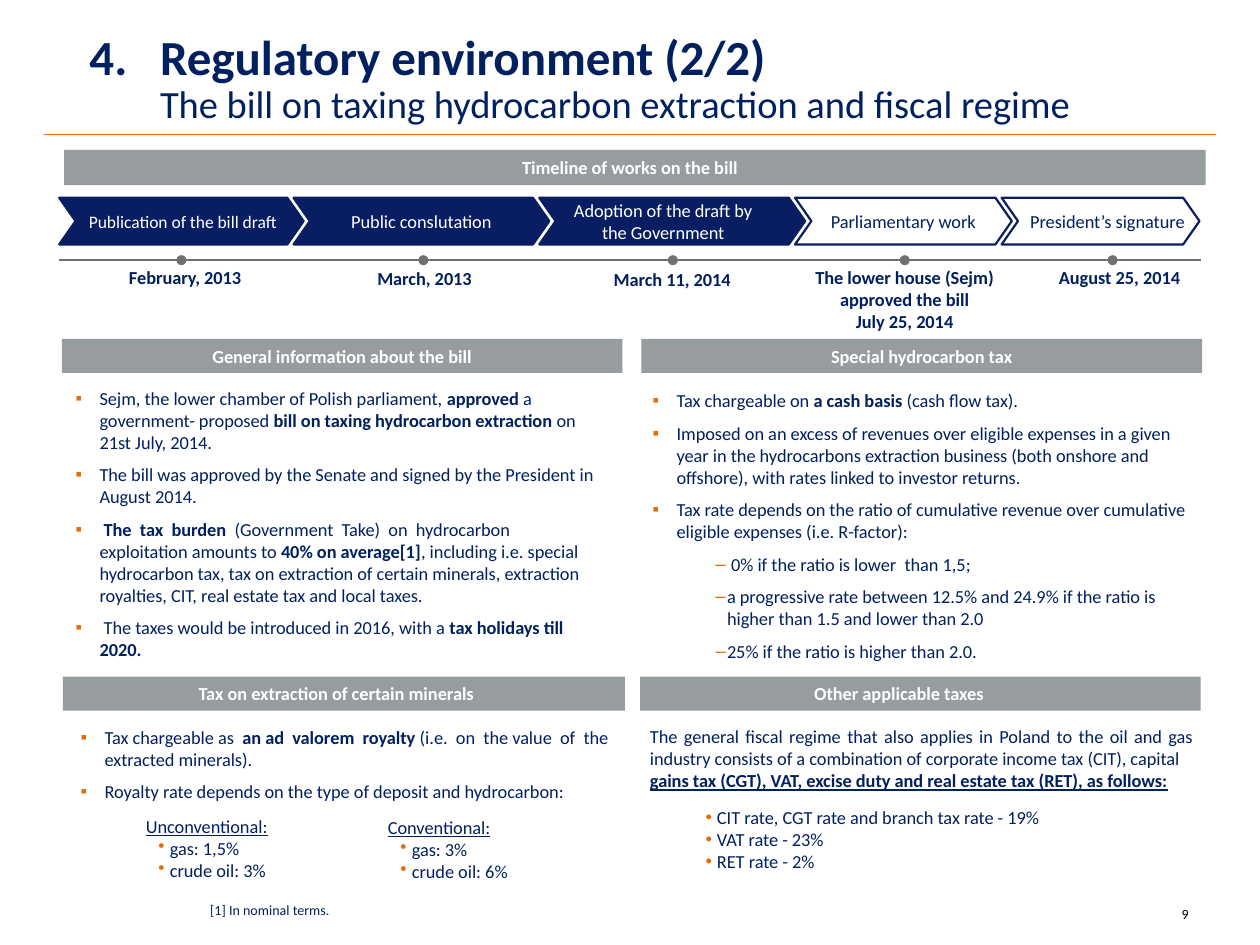
from lxml.etree import SubElement
from pptx import Presentation
from pptx.dml.color import RGBColor
from pptx.enum.shapes import MSO_CONNECTOR, MSO_SHAPE
from pptx.enum.text import MSO_ANCHOR, MSO_AUTO_SIZE, PP_ALIGN
from pptx.oxml.ns import qn
from pptx.util import Inches, Pt

theme = {
    "font": "Calibri", "navy": "002060", "deep": "091D63", "white": "FFFFFF",
    "grey": "979C9E", "dark": "707070", "orange": "FF6600", "mark": "E46C0A",
    "black": "000000", "head": 28, "sub": 22, "text": 10.5, "step": 10, "note": 8,
}
kinds = {
    "plain": {},
    "under": {"line": True},
    "square": {"char": "▪", "left": 0.19, "hang": -0.19, "after": 6},
    "dash": {"char": "‒", "left": 0.59, "hang": -0.09, "after": 6, "level": 1},
    "dot": {"char": "•", "left": 0.19, "hang": -0.09},
    "title": {"start": "4", "left": 0.58, "hang": -0.56, "lead": 0.9},
}

deck = Presentation()
deck.slide_width, deck.slide_height = Inches(10), Inches(7.5)
slide = deck.slides.add_slide(deck.slide_layouts[4])
shapes = slide.shapes
holders = {p.placeholder_format.idx: p for p in slide.placeholders}
col, row = deck.slide_width / 100, deck.slide_height / 75


def cells(x, y, w, h):
    return [round(x * col), round(y * row), round(w * col), round(h * row)]


def put(shape, rows, tone="navy", size="text", align=PP_ALIGN.LEFT, **extra):
    frame = shape.text_frame
    look = {"word_wrap": True, "auto_size": MSO_AUTO_SIZE.NONE,
            "vertical_anchor": MSO_ANCHOR.TOP} | extra
    for name, value in look.items():
        setattr(frame, name, value)
    for i, (kind, text) in enumerate(rows):
        rule = kinds[kind]
        para = frame.paragraphs[0] if i == 0 else frame.add_paragraph()
        form = {"alignment": align, "level": rule.get("level", 0), "space_before": Pt(0),
                "space_after": Pt(rule.get("after", 0)), "line_spacing": rule.get("lead", 1.0)}
        for name, value in form.items():
            setattr(para, name, value)
        if "left" in rule:
            props = para._p.get_or_add_pPr()
            props.set("marL", str(Inches(rule["left"])))
            props.set("indent", str(Inches(rule["hang"])))
            if "char" in rule:
                tint = SubElement(props, qn("a:buClr"))
                SubElement(tint, qn("a:srgbClr"), val=theme["mark"])
                SubElement(props, qn("a:buChar"), char=rule["char"])
            else:
                SubElement(props, qn("a:buAutoNum"), type="arabicPeriod", startAt=rule["start"])
        for j, part in enumerate(text.split("*")):
            for k, piece in enumerate(part.split("\n")):
                if k:
                    para.add_line_break()
                if piece:
                    run = para.add_run()
                    run.text = piece
                    form = {"name": theme["font"], "size": Pt(theme[size]),
                            "bold": j % 2 == 1, "underline": rule.get("line", False)}
                    for name, value in form.items():
                        setattr(run.font, name, value)
                    run.font.color.rgb = RGBColor.from_string(theme[tone])
        for gap in para._p.findall(qn("a:br")):
            SubElement(gap, qn("a:rPr"), sz=str(int(theme[size] * 100)))


title = shapes.title
title.left, title.top, title.width, title.height = cells(5.9, 2.1, 93.7, 8.6)
put(title, [("title", "*Regulatory environment (2/2)*\n"
             "The bill on taxing hydrocarbon extraction and fiscal regime")], size="head")
title.text_frame.paragraphs[0].runs[-1].font.size = Pt(theme["sub"])

for x, y, end, tone, thick in [(3.5, 10.7, 96.5, "orange", 0.75), (4.7, 20.65, 95.3, "dark", 1.5)]:
    left, top, right, low = cells(x, y, end, y)
    rule = shapes.add_connector(MSO_CONNECTOR.STRAIGHT, left, top, right, low)
    rule.line.color.rgb = RGBColor.from_string(theme[tone])
    rule.line.width = Pt(thick)
    SubElement(rule._element.spPr, qn("a:effectLst"))

bars = [
    (5.1, 11.9, 90.6, 2.8, "Timeline of works on the bill", 0.08),
    (4.9, 26.9, 44.5, 2.7, "General information about the bill", 0),
    (50.9, 26.9, 44.5, 2.7, "Special hydrocarbon tax", 0),
    (5, 53.7, 44.6, 2.7, "Tax on extraction of certain minerals", 0.12),
    (50.8, 53.7, 44.5, 2.7, "Other applicable taxes", 0.34),
]
for x, y, w, h, text, lean in bars:
    bar = shapes.add_shape(MSO_SHAPE.RECTANGLE, *cells(x, y, w, h))
    bar.shadow.inherit = False
    bar.fill.solid()
    bar.fill.fore_color.rgb = RGBColor.from_string(theme["grey"])
    bar.line.fill.background()
    put(bar, [("plain", f"*{text}*")], "white", align=PP_ALIGN.CENTER,
        vertical_anchor=MSO_ANCHOR.MIDDLE, margin_left=0, margin_right=Inches(lean),
        margin_top=0, margin_bottom=0)

steps = [
    (19.4, "Publication of the bill draft", "step", True, 0.02, 0, 14.4,
     (8.9, 20.6, 11.6, 2.8), "February, 2013"),
    (20.3, "Public conslutation", "text", True, 0, 0, 33.6,
     (28.7, 20.7, 10, 2.8), "March, 2013"),
    (21.1, "Adoption of the draft by the Government", "text", True, 0.1, 0.24, 53.4,
     (47.4, 20.8, 11.9, 2.8), "March 11, 2014"),
    (17.2, "Parliamentary work", "text", False, 0, 0, 71.8,
     (63.5, 20.6, 16.6, 6.3), "The lower house (Sejm) approved the bill\nJuly 25, 2014"),
    (15.7, "President’s signature", "text", False, 0.11, 0, 88.3,
     (82.9, 20.6, 11.9, 2.8), "August 25, 2014"),
]
x = 4.7
for w, text, size, done, left, right, spot, place, date in steps:
    step = shapes.add_shape(MSO_SHAPE.CHEVRON, *cells(x, 15.7, w, 3.7))
    step.adjustments[0] = 0.35
    step.shadow.inherit = False
    if done:
        step.fill.solid()
        step.fill.fore_color.rgb = RGBColor.from_string(theme["deep"])
    else:
        step.fill.background()
    step.line.color.rgb = RGBColor.from_string(theme["deep"])
    step.line.width = Pt(1.25)
    put(step, [("plain", text)], "white" if done else "navy", size, PP_ALIGN.CENTER,
        word_wrap=right > 0, vertical_anchor=MSO_ANCHOR.MIDDLE, margin_left=Inches(left),
        margin_right=Inches(right), margin_top=0, margin_bottom=0)
    dot = shapes.add_shape(MSO_SHAPE.OVAL, *cells(spot - 0.4, 20.25, 0.8, 0.8))
    dot.shadow.inherit = False
    dot.fill.solid()
    dot.fill.fore_color.rgb = RGBColor.from_string(theme["dark"])
    dot.line.fill.background()
    put(shapes.add_textbox(*cells(*place)), [("plain", f"*{date}*")],
        align=PP_ALIGN.CENTER, word_wrap="\n" in date)
    x += w - 0.8

lists = {
    1: ((5, 30.2, 44.1, 23), [
        ("square", "Sejm, the lower chamber of Polish parliament, *approved *a government- proposed "
         "*bill on taxing hydrocarbon extraction *on 21st July, 2014."),
        ("square", "The bill was approved by the Senate and signed by the President in August 2014."),
        ("square", " *The  tax  burden  *(Government  Take)  on  hydrocarbon  exploitation amounts to "
         "*40% on average[1]*, including i.e. special hydrocarbon tax, tax on extraction of certain "
         "minerals, extraction royalties, CIT, real estate tax and local taxes."),
        ("square", " The taxes would be introduced in 2016, with a *tax holidays till 2020.*")]),
    2: ((50.8, 30.4, 44.9, 22.9), [
        ("square", "Tax chargeable on *a cash basis *(cash flow tax)."),
        ("square", "Imposed on an excess of revenues over eligible expenses in a given year in the "
         "hydrocarbons extraction business (both onshore and offshore), with rates linked to "
         "investor returns."),
        ("square", "Tax rate depends on the ratio of cumulative revenue over cumulative eligible "
         "expenses (i.e. R-factor):"),
        ("dash", " 0% if the ratio is lower  than 1,5;"),
        ("dash", "a progressive rate between 12.5% and 24.9% if the ratio is higher than 1.5 "
         "and lower than 2.0"),
        ("dash", "25% if the ratio is higher than 2.0.")]),
    3: ((5.4, 57.1, 44.2, 7.2), [
        ("square", "Tax chargeable as  *an ad  valorem  royalty *(i.e.  on  the value  of  the "
         "extracted minerals)."),
        ("square", "Royalty rate depends on the type of deposit and hydrocarbon:")]),
    4: ((54, 63.5, 29.9, 6.3), [
        ("dot", "CIT rate, CGT rate and branch tax rate - 19%"),
        ("dot", "VAT rate - 23%"),
        ("dot", "RET rate - 2%")]),
}
for key, (place, rows) in lists.items():
    body = holders[key]
    body.left, body.top, body.width, body.height = cells(*place)
    put(body, rows)

rates = [(10.6, 64.2, 12.4, "Unconventional:", "1,5%", "3%"),
         (29.8, 64.3, 13.1, "Conventional:", "3%", "6%")]
for x, y, w, name, gas, oil in rates:
    put(shapes.add_textbox(*cells(x, y, w, 6.3)),
        [("under", name), ("dot", f"gas: {gas}"), ("dot", f"crude oil: {oil}")])

put(shapes.add_textbox(*cells(50.6, 57.1, 45.1, 6.3)), [
    ("plain", "The general fiscal regime that also applies in Poland to the oil and gas industry "
     "consists of a combination of corporate income tax (CIT), capital"),
    ("under", "*gains tax (CGT), VAT, excise duty and real estate tax (RET), as follows:*"),
], align=PP_ALIGN.JUSTIFY)
put(shapes.add_textbox(*cells(15.7, 71.1, 11.6, 2.4)), [("plain", "[1] In nominal terms.")],
    size="note", word_wrap=False)
put(shapes.add_textbox(*cells(92.8, 71.4, 4.7, 3)), [("plain", "9")], "black", "note")

deck.save("out.pptx")
